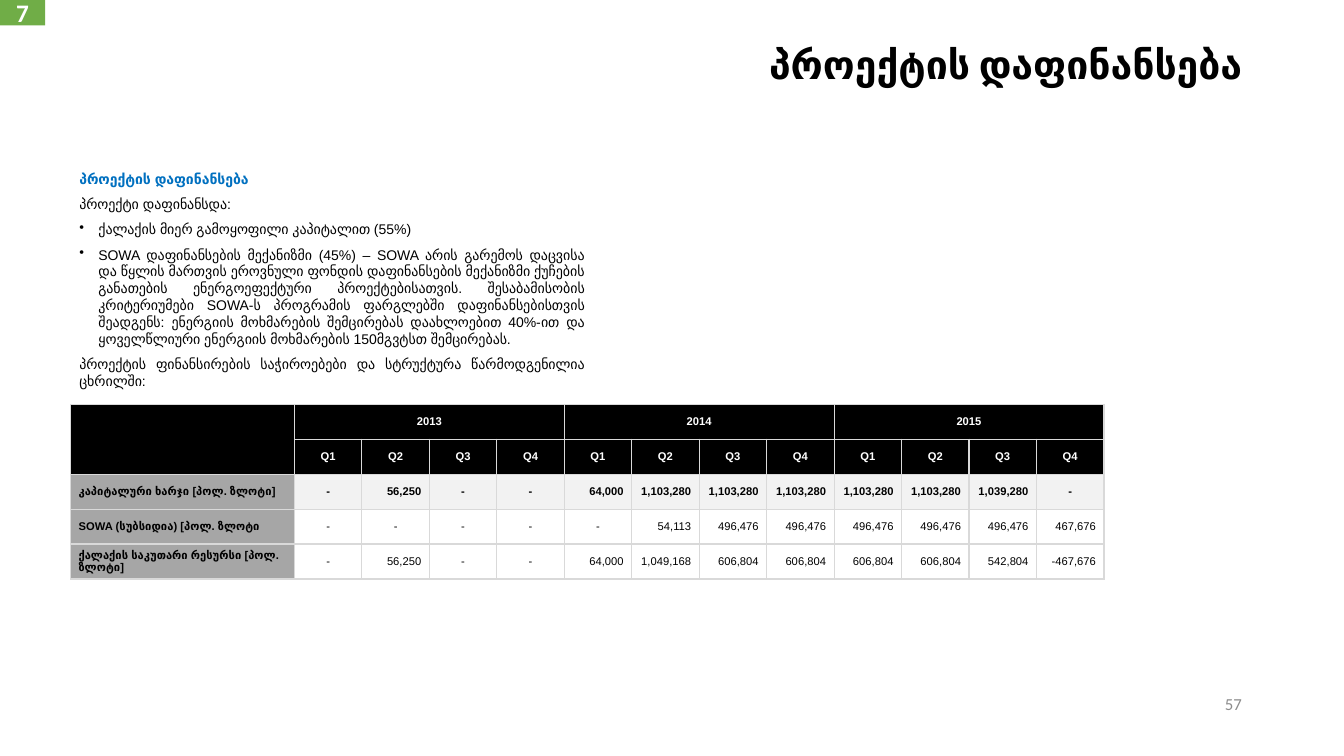
import dataclasses
import typing

import lxml.etree
import pptx
import pptx.dml.color
import pptx.enum.shapes
import pptx.enum.text
import pptx.oxml.ns
import pptx.util

Cm = pptx.util.Cm
Align = pptx.enum.text.PP_ALIGN
Anchor = pptx.enum.text.MSO_ANCHOR
qn = pptx.oxml.ns.qn


@dataclasses.dataclass(frozen=True)
class Theme:
    heading_font: str = "Calibri"
    body_font: str = "Arial"
    black: str = "000000"
    white: str = "FFFFFF"
    blue: str = "0070C0"
    green: str = "70AD47"
    page_gray: str = "8C8C8C"
    label_gray: str = "A6A6A6"
    total_gray: str = "F2F2F2"
    grid_gray: str = "D9D9D9"
    title_size: int = 28
    badge_size: int = 18
    page_size: int = 12
    body_size: int = 10
    table_size: int = 8


@dataclasses.dataclass(frozen=True)
class Style:
    font: str
    size: int
    color: str
    bold: bool = False
    align: Align = Align.LEFT


@dataclasses.dataclass(frozen=True)
class Box:
    left: float
    top: float
    width: float
    height: float

    def lengths(self) -> tuple:
        return tuple(Cm(value) for value in dataclasses.astuple(self))


@dataclasses.dataclass(frozen=True)
class Passage:
    text: str
    heading: bool = False
    bullet: bool = False


@dataclasses.dataclass(frozen=True)
class FundingRow:
    label: str
    amounts: str
    fill: str
    bold: bool = False


THEME = Theme()
YEARS = ("2013", "2014", "2015")
QUARTERS = ("Q1", "Q2", "Q3", "Q4")
LABEL_WIDTH, QUARTER_WIDTH, ROW_HEIGHT = 5.64, 1.7, 0.88

PASSAGES = (
    Passage("პროექტის დაფინანსება", heading=True),
    Passage("პროექტი დაფინანსდა:"),
    Passage("ქალაქის მიერ გამოყოფილი კაპიტალით (55%)", bullet=True),
    Passage(
        "SOWA დაფინანსების მექანიზმი (45%) – SOWA არის გარემოს დაცვისა და წყლის "
        "მართვის ეროვნული ფონდის დაფინანსების მექანიზმი ქუჩების განათების "
        "ენერგოეფექტური პროექტებისათვის. შესაბამისობის კრიტერიუმები SOWA-ს "
        "პროგრამის ფარგლებში დაფინანსებისთვის შეადგენს: ენერგიის მოხმარების "
        "შემცირებას დაახლოებით 40%-ით და ყოველწლიური ენერგიის მოხმარების "
        "150მგვტსთ შემცირებას.",
        bullet=True,
    ),
    Passage("პროექტის ფინანსირების საჭიროებები და სტრუქტურა წარმოდგენილია ცხრილში:"),
)

FUNDING = (
    FundingRow(
        "კაპიტალური ხარჯი [პოლ. ზლოტი]",
        "- 56,250 - - 64,000 1,103,280 1,103,280 1,103,280 1,103,280 1,103,280 1,039,280 -",
        THEME.total_gray,
        bold=True,
    ),
    FundingRow(
        "SOWA (სუბსიდია) [პოლ. ზლოტი",
        "- - - - - 54,113 496,476 496,476 496,476 496,476 496,476 467,676",
        THEME.white,
    ),
    FundingRow(
        "ქალაქის საკუთარი რესურსი [პოლ. ზლოტი]",
        "- 56,250 - - 64,000 1,049,168 606,804 606,804 606,804 606,804 542,804 -467,676",
        THEME.white,
    ),
)


def rgb(color: str) -> pptx.dml.color.RGBColor:
    return pptx.dml.color.RGBColor.from_string(color)


def write(paragraph: typing.Any, text: str, style: Style) -> None:
    paragraph.text = text
    paragraph.alignment = style.align
    paragraph.font.name = style.font
    paragraph.font.size = pptx.util.Pt(style.size)
    paragraph.font.bold = style.bold
    paragraph.font.color.rgb = rgb(style.color)


def add_text(slide: typing.Any, box: Box, text: str, style: Style, anchor: Anchor) -> typing.Any:
    frame = slide.shapes.add_textbox(*box.lengths()).text_frame
    frame.word_wrap = True
    frame.vertical_anchor = anchor
    write(frame.paragraphs[0], text, style)
    return frame


def add_badge(slide: typing.Any, box: Box, text: str, style: Style) -> None:
    badge = slide.shapes.add_shape(pptx.enum.shapes.MSO_SHAPE.RECTANGLE, *box.lengths())
    badge.shadow.inherit = False
    badge.fill.solid()
    badge.fill.fore_color.rgb = rgb(THEME.green)
    badge.line.fill.background()
    badge.text_frame.vertical_anchor = Anchor.MIDDLE
    write(badge.text_frame.paragraphs[0], text, style)


def add_passages(slide: typing.Any, box: Box, passages: tuple[Passage, ...]) -> None:
    frame = slide.shapes.add_textbox(*box.lengths()).text_frame
    frame.word_wrap = True
    columns = frame._txBody.bodyPr
    columns.set("numCol", "2")
    columns.set("spcCol", str(Cm(0.89)))
    for index, passage in enumerate(passages):
        paragraph = frame.add_paragraph() if index else frame.paragraphs[0]
        if index:
            paragraph.space_before = pptx.util.Pt(3)
        paragraph.space_after = pptx.util.Pt(3)
        if passage.bullet:
            properties = paragraph._p.get_or_add_pPr()
            properties.set("marL", str(Cm(0.48)))
            properties.set("indent", str(-Cm(0.48)))
            lxml.etree.SubElement(properties, qn("a:buChar"), char="•")
        color = THEME.blue if passage.heading else THEME.black
        write(paragraph, passage.text,
              Style(THEME.body_font, THEME.body_size, color, passage.heading, Align.JUSTIFY))


def fill_cell(cell: typing.Any, text: str, fill: str, color: str, bold: bool, align: Align) -> None:
    cell.margin_left = cell.margin_right = Cm(0.2)
    cell.margin_top = cell.margin_bottom = 0
    cell.vertical_anchor = Anchor.MIDDLE
    properties = cell._tc.get_or_add_tcPr()
    for side in ("a:lnL", "a:lnR", "a:lnT", "a:lnB"):
        border = lxml.etree.SubElement(properties, qn(side), w=str(pptx.util.Pt(1)))
        paint = lxml.etree.SubElement(border, qn("a:solidFill"))
        lxml.etree.SubElement(paint, qn("a:srgbClr"), val=THEME.grid_gray)
    cell.fill.solid()
    cell.fill.fore_color.rgb = rgb(fill)
    write(cell.text_frame.paragraphs[0], text,
          Style(THEME.body_font, THEME.table_size, color, bold, align))


def add_funding_table(slide: typing.Any, left: float, top: float) -> None:
    quarter_count = len(YEARS) * len(QUARTERS)
    box = Box(left, top, LABEL_WIDTH + quarter_count * QUARTER_WIDTH,
              (len(FUNDING) + 2) * ROW_HEIGHT)
    table = slide.shapes.add_table(len(FUNDING) + 2, quarter_count + 1, *box.lengths()).table
    table.first_row = table.horz_banding = False
    for index, column in enumerate(table.columns):
        column.width = Cm(QUARTER_WIDTH if index else LABEL_WIDTH)
    for row in table.rows:
        row.height = Cm(ROW_HEIGHT)

    year_cells = [text for year in YEARS for text in (year, "", "", "")]
    for row, texts in enumerate((["", *year_cells], ["", *QUARTERS * len(YEARS)])):
        for column, text in enumerate(texts):
            fill_cell(table.cell(row, column), text, THEME.black, THEME.white, True, Align.CENTER)
    table.cell(0, 0).merge(table.cell(1, 0))
    for first in range(1, quarter_count, len(QUARTERS)):
        table.cell(0, first).merge(table.cell(0, first + len(QUARTERS) - 1))

    for row, funding in enumerate(FUNDING, start=2):
        fill_cell(table.cell(row, 0), funding.label, THEME.label_gray, THEME.black, True, Align.LEFT)
        for column, amount in enumerate(funding.amounts.split(), start=1):
            align = Align.CENTER if amount == "-" else Align.RIGHT
            fill_cell(table.cell(row, column), amount, funding.fill, THEME.black, funding.bold, align)


def main() -> None:
    deck = pptx.Presentation()
    deck.slide_width, deck.slide_height = Cm(33.87), Cm(19.05)
    slide = deck.slides.add_slide(deck.slide_layouts[6])
    add_text(slide, Box(23.93, 17.22, 7.62, 1.02), "57",
             Style(THEME.heading_font, THEME.page_size, THEME.page_gray, align=Align.RIGHT),
             Anchor.MIDDLE)
    add_badge(slide, Box(0, 0, 1.14, 0.64), "7",
              Style(THEME.heading_font, THEME.badge_size, THEME.white, True, Align.CENTER))
    title = add_text(slide, Box(2.34, 1.02, 29.21, 1.45), "პროექტის დაფინანსება",
                     Style(THEME.heading_font, THEME.title_size, THEME.black, True, Align.RIGHT),
                     Anchor.TOP)
    title.paragraphs[0].line_spacing = 0.9
    add_passages(slide, Box(1.75, 4.17, 26.85, 14.88), PASSAGES)
    add_funding_table(slide, 1.78, 10.19)
    deck.save("out.pptx")


if __name__ == "__main__":
    main()
